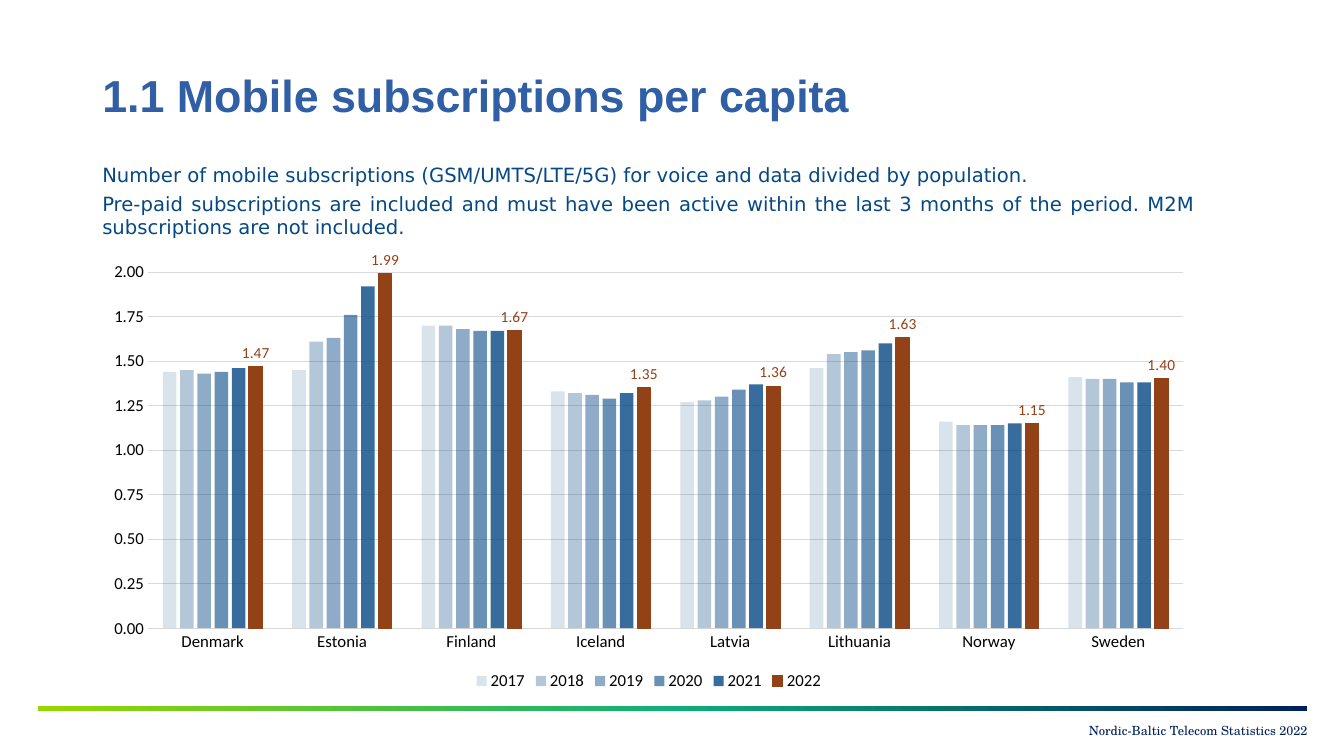
from lxml import etree
from pptx import Presentation
from pptx.chart.data import CategoryChartData
from pptx.dml.color import RGBColor
from pptx.enum.chart import XL_CHART_TYPE, XL_LABEL_POSITION, XL_LEGEND_POSITION, XL_TICK_MARK
from pptx.enum.shapes import MSO_SHAPE
from pptx.enum.text import MSO_ANCHOR, PP_ALIGN
from pptx.oxml import parse_xml
from pptx.oxml.ns import nsdecls, qn
from pptx.util import Pt

COLUMNS = XL_CHART_TYPE.COLUMN_CLUSTERED
BOTTOM = XL_LEGEND_POSITION.BOTTOM
OUTSIDE_END = XL_LABEL_POSITION.OUTSIDE_END
NO_TICK = XL_TICK_MARK.NONE
RECTANGLE = MSO_SHAPE.RECTANGLE
TOP, MIDDLE = MSO_ANCHOR.TOP, MSO_ANCHOR.MIDDLE
LEFT, RIGHT, JUSTIFY = PP_ALIGN.LEFT, PP_ALIGN.RIGHT, PP_ALIGN.JUSTIFY

EMU_PER_PX = 9525
NAVY, BLUE, TITLE_BLUE = "00205B", "054884", "305FA6"
BROWN, GREY, BLACK = "934218", "D9D9D9", "000000"

COUNTRIES = ["Denmark", "Estonia", "Finland", "Iceland",
             "Latvia", "Lithuania", "Norway", "Sweden"]
# year: (opacity in percent, subscriptions per capita by country)
YEARS = {
    "2017": (15, [1.44, 1.45, 1.70, 1.33, 1.27, 1.46, 1.16, 1.41]),
    "2018": (30, [1.45, 1.61, 1.70, 1.32, 1.28, 1.54, 1.14, 1.40]),
    "2019": (45, [1.43, 1.63, 1.68, 1.31, 1.30, 1.55, 1.14, 1.40]),
    "2020": (60, [1.44, 1.76, 1.67, 1.29, 1.34, 1.56, 1.14, 1.38]),
    "2021": (80, [1.46, 1.92, 1.67, 1.32, 1.37, 1.60, 1.15, 1.38]),
    "2022": (100, [1.47, 1.99, 1.67, 1.35, 1.36, 1.63, 1.15, 1.40]),
}
DEFINITION = [
    "Number of mobile subscriptions (GSM/UMTS/LTE/5G) for voice and data divided by population.",
    "Pre-paid subscriptions are included and must have been active within the last 3 months "
    "of the period. M2M subscriptions are not included.",
]


def px(*lengths):
    return [length * EMU_PER_PX for length in lengths]


def rgb(color):
    return RGBColor.from_string(color)


def set_font(font, name, size, color, bold=False):
    font.name, font.size, font.bold = name, Pt(size), bold
    font.color.rgb = rgb(color)


def set_line(line, color):
    line.color.rgb = rgb(color)
    line.width = Pt(0.75)


def add_text(page, place, texts, font, frame_format=None, para_format=None):
    frame = page.shapes.add_textbox(*px(*place)).text_frame
    frame.word_wrap = True
    for name, value in (frame_format or {}).items():
        setattr(frame, name, value)
    for index, text in enumerate(texts):
        para = frame.paragraphs[0] if index == 0 else frame.add_paragraph()
        for name, value in (para_format or {}).items():
            setattr(para, name, value)
        span = para.add_run()
        span.text = text
        set_font(span.font, *font)


def add_gradient_bar(page, place, stops):
    bar = page.shapes.add_shape(RECTANGLE, *px(*place))
    bar.shadow.inherit = False
    bar.line.fill.background()
    bar.fill.gradient()
    bar.fill.gradient_angle = 0
    stop_list = bar.fill.gradient_stops[0]._gs.getparent()
    for stop in list(stop_list):
        stop_list.remove(stop)
    for percent, color in stops:
        stop = etree.SubElement(stop_list, qn("a:gs"), pos=str(percent * 1000))
        etree.SubElement(stop, qn("a:srgbClr"), val=color)


def set_plot_area(chart, **fractions):
    """Fix the inner plot area, as fractions of the chart's size."""
    plot_area = chart._chartSpace.chart.plotArea
    for layout in plot_area.findall(qn("c:layout")):
        plot_area.remove(layout)
    sizes = "".join(f'<c:{name} val="{value}"/>' for name, value in fractions.items())
    plot_area.insert(0, parse_xml(
        f'<c:layout {nsdecls("c")}><c:manualLayout><c:layoutTarget val="inner"/>'
        f'<c:xMode val="edge"/><c:yMode val="edge"/>{sizes}</c:manualLayout></c:layout>'))


def style_axes(chart):
    for axis in (chart.category_axis, chart.value_axis):
        axis.major_tick_mark = axis.minor_tick_mark = NO_TICK
        set_font(axis.tick_labels.font, "Calibri", 12, BLACK)
    set_line(chart.category_axis.format.line, GREY)
    values = chart.value_axis
    values.minimum_scale, values.maximum_scale, values.major_unit = 0, 2, 0.25
    values.format.line.fill.background()
    set_line(values.major_gridlines.format.line, GREY)
    values.tick_labels.number_format = "#,##0.00"
    values.tick_labels.number_format_is_linked = False


def style_series(series, opacity):
    fill = series.format.fill
    fill.solid()
    fill.fore_color.rgb = rgb(BLUE)
    color = series._element.spPr.find(".//" + qn("a:srgbClr"))
    etree.SubElement(color, qn("a:alpha"), val=str(opacity * 1000))


def highlight_series(series):
    series.format.fill.solid()
    series.format.fill.fore_color.rgb = rgb(BROWN)
    set_line(series.format.line, BROWN)
    labels = series.data_labels
    label_format = {"show_value": True, "number_format": "0.00",
                    "number_format_is_linked": False, "position": OUTSIDE_END}
    for name, value in label_format.items():
        setattr(labels, name, value)
    set_font(labels.font, "Calibri", 11, BROWN)


def add_column_chart(page, place):
    data = CategoryChartData(number_format="0.00")
    data.categories = COUNTRIES
    for year, (_, values) in YEARS.items():
        data.add_series(year, values)
    chart = page.shapes.add_chart(COLUMNS, *px(*place), data).chart
    chart.has_title = False
    set_font(chart.font, "Calibri", 10, BLACK)
    chart.has_legend = True
    chart.legend.position = BOTTOM
    chart.legend.include_in_layout = False
    set_font(chart.legend.font, "Calibri", 12, BLACK)
    style_axes(chart)
    set_plot_area(chart, x=0.05, y=0.05, w=0.93, h=0.8)

    plot = chart.plots[0]
    plot.gap_width, plot.overlap, plot.vary_by_categories = 219, -27, False
    *earlier, latest = plot.series
    for series in earlier:
        style_series(series, YEARS[series.name][0])
    highlight_series(latest)


def main():
    deck = Presentation()
    deck.slide_width, deck.slide_height = px(1280, 720)
    page = deck.slides.add_slide(deck.slide_layouts[6])

    add_gradient_bar(page, (36, 672, 1209, 5), [(0, "97D700"), (50, "0EAF78"), (100, NAVY)])
    add_text(page, (941, 684, 304, 29), ["Nordic-Baltic Telecom Statistics 2022"],
             ("TeX Gyre Schola", 9, NAVY),
             {"vertical_anchor": MIDDLE, "margin_right": 0, "margin_top": 0},
             {"alignment": RIGHT})
    add_text(page, (88, 38, 1104, 111), ["1.1 Mobile subscriptions per capita"],
             ("Arial", 32, TITLE_BLUE, True),
             {"vertical_anchor": MIDDLE}, {"alignment": LEFT, "line_spacing": 0.9})
    add_text(page, (88, 150, 1060, 96), DEFINITION, ("DejaVu Sans", 14, BLUE),
             {"vertical_anchor": TOP}, {"alignment": JUSTIFY, "space_before": Pt(4)})
    add_column_chart(page, (88, 238, 1060, 424))

    deck.save("out.pptx")


if __name__ == "__main__":
    main()
